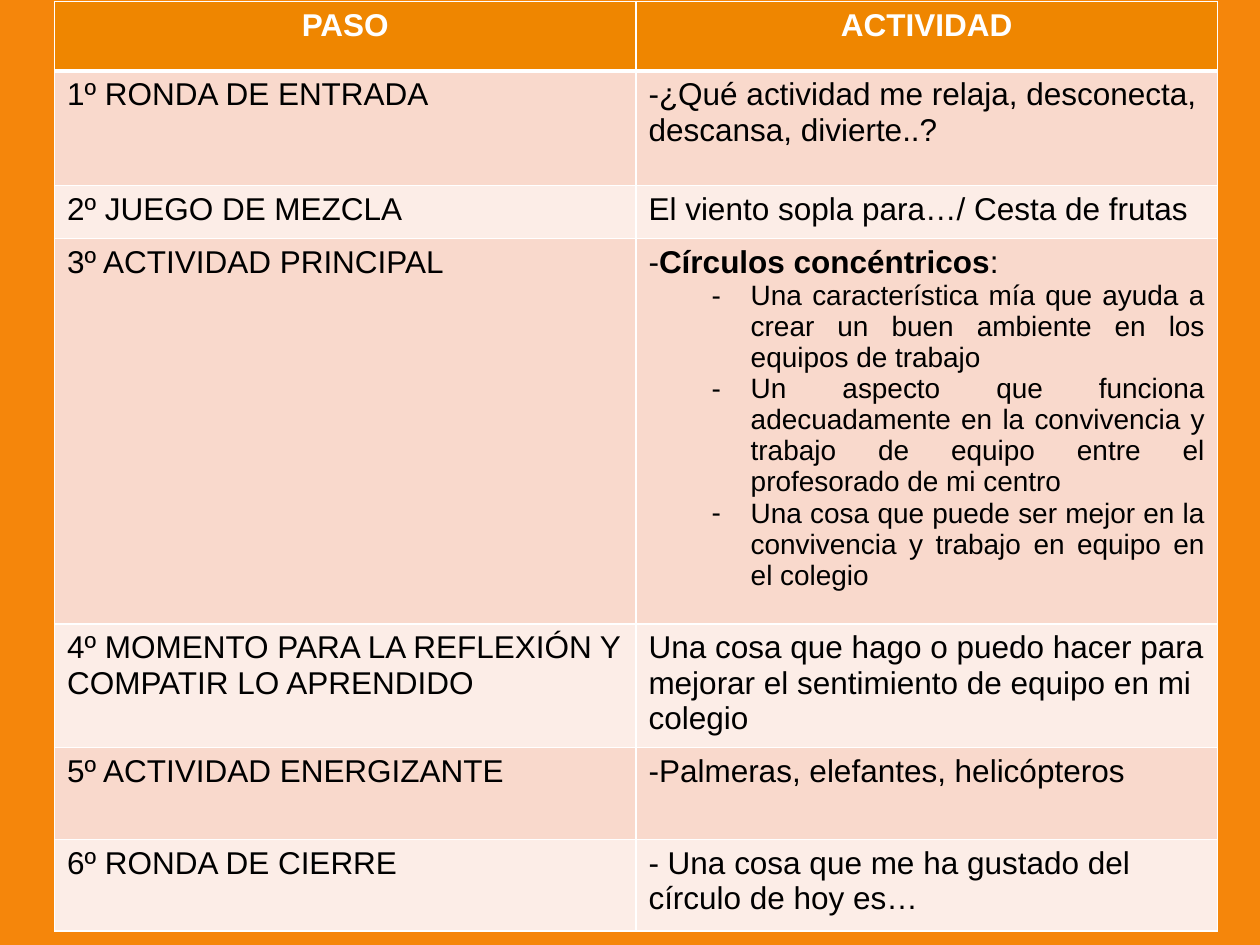
from lxml import etree
from pptx import Presentation
from pptx.dml.color import RGBColor
from pptx.enum.text import PP_ALIGN
from pptx.oxml.ns import qn
from pptx.util import Cm, Pt

CENTER, JUSTIFY = PP_ALIGN.CENTER, PP_ALIGN.JUSTIFY
COLORS = {
    "background": "F5860B",
    "header": "EF8600",
    "odd": "F9D9CC",
    "even": "FCEDE7",
    "light": "FFFFFF",
    "dark": "000000",
}
HEADINGS = ("PASO", "ACTIVIDAD")
STEPS = [
    (2.31, "1º RONDA DE ENTRADA",
     ["-¿Qué actividad me relaja, desconecta, descansa, divierte..?"]),
    (1.07, "2º JUEGO DE MEZCLA", ["El viento sopla para…/ Cesta de frutas"]),
    (7.77, "3º ACTIVIDAD PRINCIPAL", [
        "-*Círculos concéntricos*:",
        "Una característica mía que ayuda a crear un buen ambiente en los equipos de trabajo",
        "Un aspecto que funciona adecuadamente en la convivencia y trabajo de equipo "
        "entre el profesorado de mi centro",
        "Una cosa que puede ser mejor en la convivencia y trabajo en equipo en el colegio",
    ]),
    (2.49, "4º MOMENTO PARA LA REFLEXIÓN Y COMPATIR LO APRENDIDO",
     ["Una cosa que hago o puedo hacer para mejorar el sentimiento de equipo en mi colegio"]),
    (1.85, "5º ACTIVIDAD ENERGIZANTE", ["-Palmeras, elefantes, helicópteros"]),
    (1.85, "6º RONDA DE CIERRE", ["- Una cosa que me ha gustado del círculo de hoy es…"]),
]


class SlideBuilder:
    """Draws styled elements on the current slide."""

    def __init__(self, slide, font="Arial", size=18, point_size=16):
        self.slide = slide
        self.font, self.size, self.point_size = font, size, point_size

    def background(self, color):
        fill = self.slide.background.fill
        fill.solid()
        fill.fore_color.rgb = RGBColor.from_string(COLORS[color])

    def table(self, left, top, column_width, row_heights, columns):
        table = self.slide.shapes.add_table(
            len(row_heights), columns, Cm(left), Cm(top),
            Cm(column_width * columns), Cm(sum(row_heights))).table
        for column in table.columns:
            column.width = Cm(column_width)
        for row, height in zip(table.rows, row_heights):
            row.height = Cm(height)
        return table

    def borders(self, cell, top=1, bottom=1):
        properties = cell._tc.get_or_add_tcPr()
        sides = (("L", 1), ("R", 1), ("T", top), ("B", bottom))
        for position, (side, width) in enumerate(sides):
            line = etree.Element(qn(f"a:ln{side}"), w=str(Pt(width)))
            fill = etree.SubElement(line, qn("a:solidFill"))
            etree.SubElement(fill, qn("a:srgbClr"), val=COLORS["light"])
            properties.insert(position, line)

    def runs(self, paragraph, text, size, color, bold=False):
        for index, part in enumerate(text.split("*")):
            run = paragraph.add_run()
            run.text = part
            run.font.name, run.font.size = self.font, Pt(size)
            run.font.bold = bold or index % 2 == 1
            run.font.color.rgb = RGBColor.from_string(COLORS[color])

    def point(self, paragraph, text, color):
        paragraph.level, paragraph.alignment = 1, JUSTIFY
        properties = paragraph._p.get_or_add_pPr()
        properties.set("marL", str(Cm(2.06)))
        properties.set("indent", str(-Cm(0.79)))
        etree.SubElement(properties, qn("a:buFont"), typeface=self.font)
        etree.SubElement(properties, qn("a:buChar"), char="-")
        self.runs(paragraph, text, self.point_size, color)

    def cell(self, cell, lines, fill, color="dark", heading=False, top=1, bottom=1):
        cell.fill.solid()
        cell.fill.fore_color.rgb = RGBColor.from_string(COLORS[fill])
        self.borders(cell, top, bottom)
        lead, *points = lines
        first = cell.text_frame.paragraphs[0]
        if heading:
            first.alignment = CENTER
        self.runs(first, lead, self.size, color, heading)
        for text in points:
            self.point(cell.text_frame.add_paragraph(), text, color)


def main():
    deck = Presentation()
    deck.slide_width, deck.slide_height = Cm(25.4), Cm(19.05)
    builder = SlideBuilder(deck.slides.add_slide(deck.slide_layouts[6]))
    builder.background("background")
    heights = [1.4] + [height for height, _, _ in STEPS]
    plan = builder.table(1.1, 0.03, 11.72, heights, len(HEADINGS))
    for column, heading in enumerate(HEADINGS):
        builder.cell(plan.cell(0, column), [heading], "header", "light", True, bottom=3)
    for row, (_, step, activity) in enumerate(STEPS, 1):
        band = "odd" if row % 2 else "even"
        for column, lines in enumerate(([step], activity)):
            builder.cell(plan.cell(row, column), lines, band, top=3 if row == 1 else 1)
    deck.save("out.pptx")


if __name__ == "__main__":
    main()
